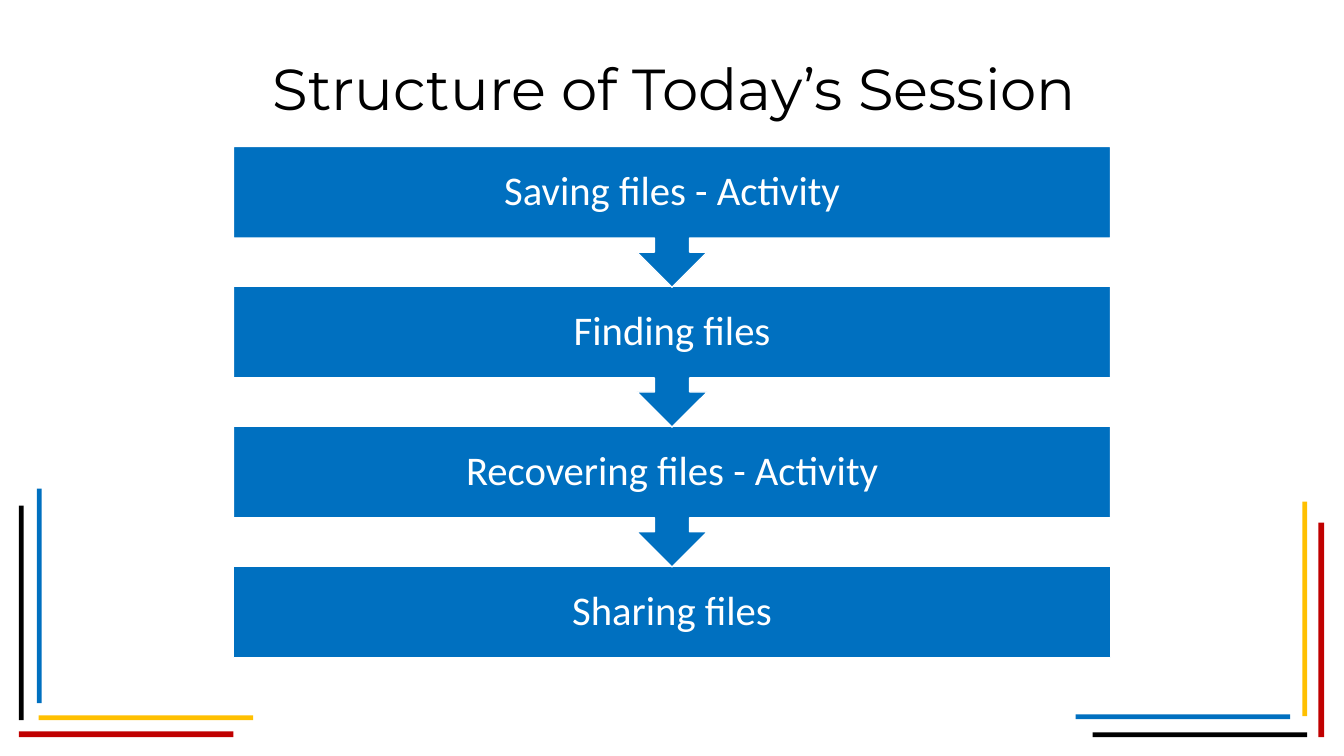
from typing import NamedTuple

from pptx import Presentation
from pptx.dml.color import RGBColor
from pptx.enum.shapes import MSO_SHAPE
from pptx.enum.text import MSO_ANCHOR, PP_ALIGN
from pptx.util import Inches, Pt

COLORS = {
    "black": "000000",
    "red": "C00000",
    "yellow": "FFC000",
    "blue": "0070C0",
    "white": "FFFFFF",
}
BAR_LENGTH = 2.27
STEP_LEFT, STEP_TOP = 2.47, 1.55
STEP_WIDTH, STEP_HEIGHT = 9.28, 0.97
STEP_PITCH, CALLOUT_HEIGHT = 1.48, 1.49
STEPS = [
    "Saving files - Activity",
    "Finding files",
    "Recovering files - Activity",
    "Sharing files",
]


class Area(NamedTuple):
    left: float
    top: float
    width: float
    height: float


class Bar(NamedTuple):
    color: str
    left: float
    top: float
    thickness: float = 0.05
    upright: bool = False


CORNER_BARS = [
    Bar("black", 0.2, 5.35, upright=True),
    Bar("red", 0.2, 7.74, 0.06),
    Bar("yellow", 0.41, 7.57),
    Bar("blue", 0.39, 5.17, upright=True),
    Bar("black", 11.56, 7.75),
    Bar("red", 13.95, 5.53, 0.06, upright=True),
    Bar("yellow", 13.78, 5.31, upright=True),
    Bar("blue", 11.38, 7.56),
]


def color_of(name: str) -> RGBColor:
    return RGBColor.from_string(COLORS[name])


def add_block(page, kind: MSO_SHAPE, area: Area, fill: str, outline: str | None = None):
    block = page.shapes.add_shape(kind, *map(Inches, area))
    block.shadow.inherit = False
    block.fill.solid()
    block.fill.fore_color.rgb = color_of(fill)
    if outline:
        block.line.color.rgb = color_of(outline)
        block.line.width = Pt(1)
    else:
        block.line.fill.background()
    return block


def add_text(page, text: str, area: Area, *, font: str, size: float, color: str,
             inset: float | None = None, line_spacing: float = 1.0) -> None:
    """Add a centred text box; inset sets all four margins."""
    box = page.shapes.add_textbox(*map(Inches, area))
    frame = box.text_frame
    frame.word_wrap = True
    frame.vertical_anchor = MSO_ANCHOR.MIDDLE
    if inset is not None:
        frame.margin_left = frame.margin_right = Inches(inset)
        frame.margin_top = frame.margin_bottom = Inches(inset)
    para = frame.paragraphs[0]
    para.alignment = PP_ALIGN.CENTER
    para.line_spacing = line_spacing
    span = para.add_run()
    span.text = text
    span.font.name = font
    span.font.size = Pt(size)
    span.font.color.rgb = color_of(color)


def add_bar(page, bar: Bar) -> None:
    size = (bar.thickness, BAR_LENGTH) if bar.upright else (BAR_LENGTH, bar.thickness)
    add_block(page, MSO_SHAPE.RECTANGLE, Area(bar.left, bar.top, *size), bar.color)


def add_step(page, index: int, text: str) -> None:
    """Draw one step; all but the last point down to the next."""
    area = Area(STEP_LEFT, STEP_TOP + index * STEP_PITCH, STEP_WIDTH, STEP_HEIGHT)
    if index == len(STEPS) - 1:
        add_block(page, MSO_SHAPE.RECTANGLE, area, "blue", "white")
    else:
        callout = add_block(page, MSO_SHAPE.UP_ARROW_CALLOUT,
                            area._replace(height=CALLOUT_HEIGHT), "blue", "white")
        callout.rotation = 180
    add_text(page, text, area, font="Calibri", size=31, color="white",
             inset=0.24, line_spacing=0.9)


def main() -> None:
    deck = Presentation()
    deck.slide_width, deck.slide_height = Inches(14.22), Inches(8)
    page = deck.slides.add_slide(deck.slide_layouts[6])
    for bar in CORNER_BARS:
        add_bar(page, bar)
    add_text(page, "Structure of Today’s Session", Area(0.67, 0.3, 12.94, 1.25),
             font="Montserrat", size=44, color="black")
    # Later steps go behind, so each arrow tip lies over the next step.
    for index, text in reversed(list(enumerate(STEPS))):
        add_step(page, index, text)
    deck.save("out.pptx")


if __name__ == "__main__":
    main()
